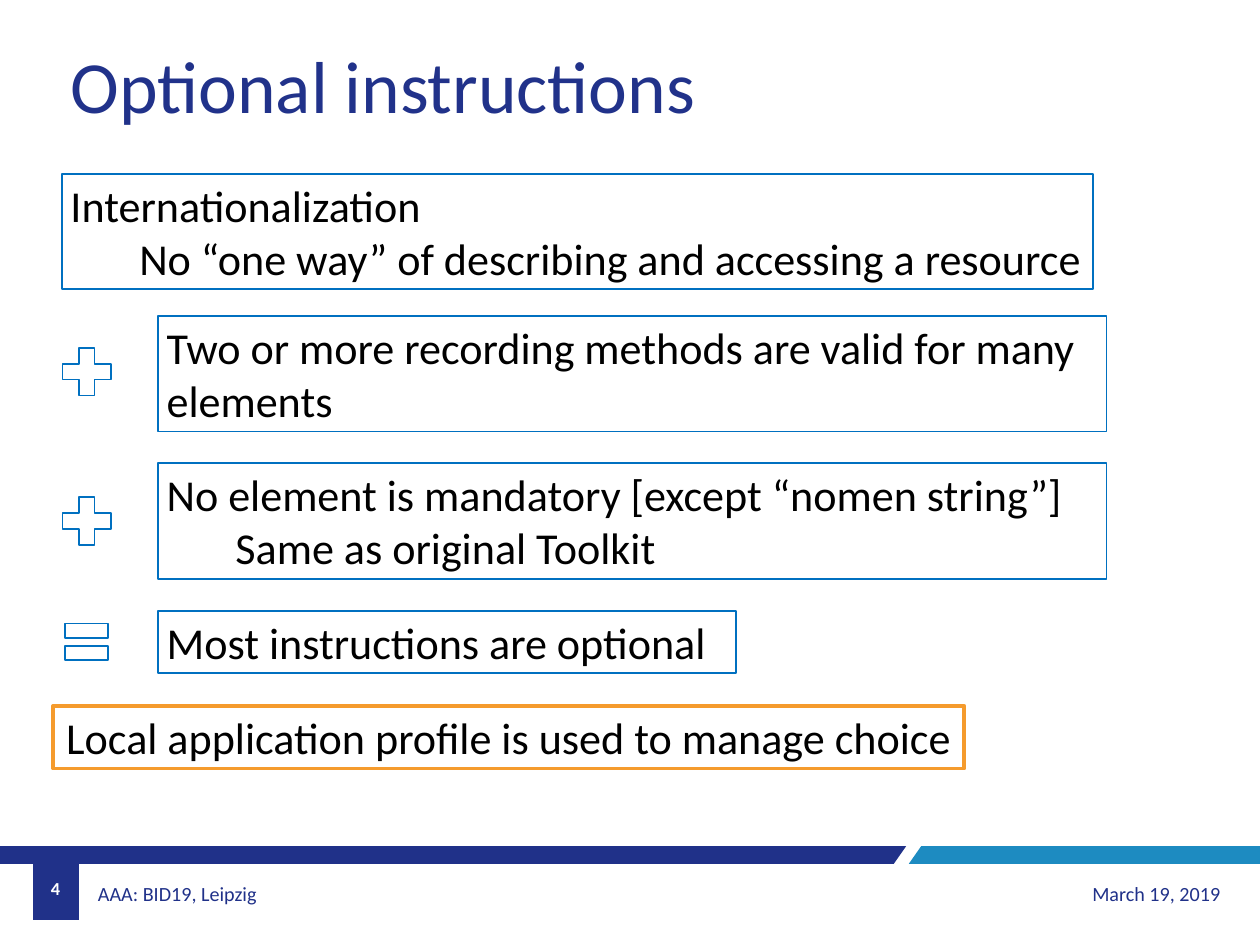
"""Build the slide on optional instructions."""
from dataclasses import dataclass

from pptx import Presentation
from pptx.dml.color import RGBColor
from pptx.enum.shapes import MSO_SHAPE
from pptx.enum.text import MSO_ANCHOR, MSO_AUTO_SIZE, PP_ALIGN
from pptx.shapes.autoshape import Shape
from pptx.slide import Slide
from pptx.text.text import TextFrame
from pptx.util import Inches, Pt

RECTANGLE, PLUS, EQUAL = MSO_SHAPE.RECTANGLE, MSO_SHAPE.MATH_PLUS, MSO_SHAPE.MATH_EQUAL
TOP, MIDDLE = MSO_ANCHOR.TOP, MSO_ANCHOR.MIDDLE
LEFT, CENTER, RIGHT = PP_ALIGN.LEFT, PP_ALIGN.CENTER, PP_ALIGN.RIGHT
NO_AUTOFIT = MSO_AUTO_SIZE.NONE

COLORS = {
    "navy": "203189",
    "title": "21328A",
    "sky": "1D8BC1",
    "outline": "0070C0",
    "orange": "F59B2D",
    "black": "000000",
    "white": "FFFFFF",
}
WIDTH, HEIGHT = 14.28, 10.71
BAND_TOP, BAND_BOTTOM = 9.59, 9.79
SUBLINE_INDENT = 0.78


@dataclass(frozen=True)
class Statement:
    """A framed statement with an optional indented second line."""
    box: tuple[float, float, float, float]
    text: str
    subline: str = ""
    outline: str = "outline"
    line_width: float = 1.5
    alignment: PP_ALIGN = LEFT
    wrap: bool = True


@dataclass(frozen=True)
class Operator:
    """A plus or equals sign beside a statement."""
    kind: MSO_SHAPE
    box: tuple[float, float, float, float]


@dataclass(frozen=True)
class FooterText:
    """A text in the footer."""
    box: tuple[float, float, float, float]
    text: str
    size: float = 16.4
    color: str = "navy"
    alignment: PP_ALIGN = LEFT
    bold: bool = False
    inset: float = 0.1


@dataclass(frozen=True)
class Band:
    """A filled footer outline."""
    points: tuple[tuple[float, float], ...]
    color: str


BANDS = (
    Band(((0, BAND_TOP), (10.27, BAND_TOP), (10.13, BAND_BOTTOM), (0, BAND_BOTTOM)), "navy"),
    Band(((10.44, BAND_TOP), (WIDTH, BAND_TOP), (WIDTH, BAND_BOTTOM), (10.3, BAND_BOTTOM)), "sky"),
    Band(((0.37, BAND_TOP), (0.89, BAND_TOP), (0.89, 10.43), (0.37, 10.43)), "navy"),
)
FOOTER_TEXTS = (
    FooterText((1.04, 9.85, 3.66, 0.55), "AAA: BID19, Leipzig", inset=0.07),
    FooterText((10.27, 9.85, 3.66, 0.55), "March 19, 2019", alignment=RIGHT),
    FooterText((0.37, 9.79, 0.52, 0.55), "4", 14.9, "white", CENTER, True),
)
STATEMENTS = (
    Statement((0.7, 1.97, 11.69, 1.31), "Internationalization",
              "No “one way” of describing and accessing a resource"),
    Statement((1.79, 3.58, 10.75, 1.31),
              "Two or more recording methods are valid for many elements"),
    Statement((1.79, 5.25, 10.75, 1.31), "No element is mandatory [except “nomen string”]",
              "Same as original Toolkit"),
    Statement((1.79, 6.92, 6.55, 0.71), "Most instructions are optional"),
    Statement((0.6, 8, 10.33, 0.71), "Local application profile is used to manage choice",
              outline="orange", line_width=3, alignment=CENTER, wrap=False),
)
OPERATORS = (
    Operator(PLUS, (0.61, 3.85, 0.75, 0.73)),
    Operator(PLUS, (0.61, 5.54, 0.75, 0.73)),
    Operator(EQUAL, (0.65, 6.92, 0.66, 0.71)),
)


def rgb(name: str) -> RGBColor:
    """Return a named colour."""
    return RGBColor.from_string(COLORS[name])


def apply_format(target: object, values: dict[str, object]) -> None:
    """Set each attribute of the target."""
    for name, value in values.items():
        setattr(target, name, value)


def write_text(frame: TextFrame, lines: list[str], size: float, color: str,
               alignment: PP_ALIGN, anchor: MSO_ANCHOR, wrap: bool = True,
               inset: float = 0.1, bold: bool = False) -> None:
    """Fill a text frame, indenting every line after the first."""
    apply_format(frame, {
        "word_wrap": wrap, "auto_size": NO_AUTOFIT, "vertical_anchor": anchor,
        "margin_left": Inches(inset), "margin_right": Inches(inset),
        "margin_top": Inches(0.05), "margin_bottom": Inches(0.05),
    })
    for index, line in enumerate(lines):
        paragraph = frame.add_paragraph() if index else frame.paragraphs[0]
        paragraph.text = line
        paragraph.alignment = alignment
        if index:
            paragraph._p.get_or_add_pPr().set("marL", str(Inches(SUBLINE_INDENT)))
        apply_format(paragraph.font, {"name": "Calibri", "size": Pt(size), "bold": bold})
        paragraph.font.color.rgb = rgb(color)


def draw_title(slide: Slide) -> None:
    """Place and format the title."""
    title = slide.shapes.title
    apply_format(title, {"left": Inches(0.7), "top": Inches(0.4),
                         "width": Inches(7.36), "height": Inches(1.11)})
    write_text(title.text_frame, ["Optional instructions"], 60, "title", LEFT, TOP, wrap=False)


def draw_band(slide: Slide, band: Band) -> None:
    """Draw a footer band."""
    points = [(Inches(x), Inches(y)) for x, y in band.points]
    builder = slide.shapes.build_freeform(*points[0])
    builder.add_line_segments(points[1:])
    shape = builder.convert_to_shape()
    shape.shadow.inherit = False
    shape.fill.solid()
    shape.fill.fore_color.rgb = rgb(band.color)
    shape.line.fill.background()


def draw_footer_text(slide: Slide, item: FooterText) -> None:
    """Draw a footer text."""
    shape = slide.shapes.add_textbox(*map(Inches, item.box))
    write_text(shape.text_frame, [item.text], item.size, item.color, item.alignment,
               MIDDLE, inset=item.inset, bold=item.bold)


def draw_outline(slide: Slide, kind: MSO_SHAPE, box: tuple[float, float, float, float],
                 color: str = "outline", line_width: float = 1.5) -> Shape:
    """Draw an unfilled preset shape."""
    shape = slide.shapes.add_shape(kind, *map(Inches, box))
    shape.shadow.inherit = False
    shape.fill.background()
    shape.line.color.rgb = rgb(color)
    shape.line.width = Pt(line_width)
    return shape


def draw_statement(slide: Slide, item: Statement) -> None:
    """Draw a framed statement."""
    shape = draw_outline(slide, RECTANGLE, item.box, item.outline, item.line_width)
    lines = [item.text, item.subline] if item.subline else [item.text]
    write_text(shape.text_frame, lines, 36, "black", item.alignment, TOP, item.wrap)


def main() -> None:
    """Build and save the presentation."""
    presentation = Presentation()
    apply_format(presentation, {"slide_width": Inches(WIDTH), "slide_height": Inches(HEIGHT)})
    slide = presentation.slides.add_slide(presentation.slide_layouts.get_by_name("Title Only"))
    for band in BANDS:
        draw_band(slide, band)
    for footer_text in FOOTER_TEXTS:
        draw_footer_text(slide, footer_text)
    draw_title(slide)
    for statement in STATEMENTS:
        draw_statement(slide, statement)
    for operator in OPERATORS:
        draw_outline(slide, operator.kind, operator.box)
    presentation.save("out.pptx")


if __name__ == "__main__":
    main()
